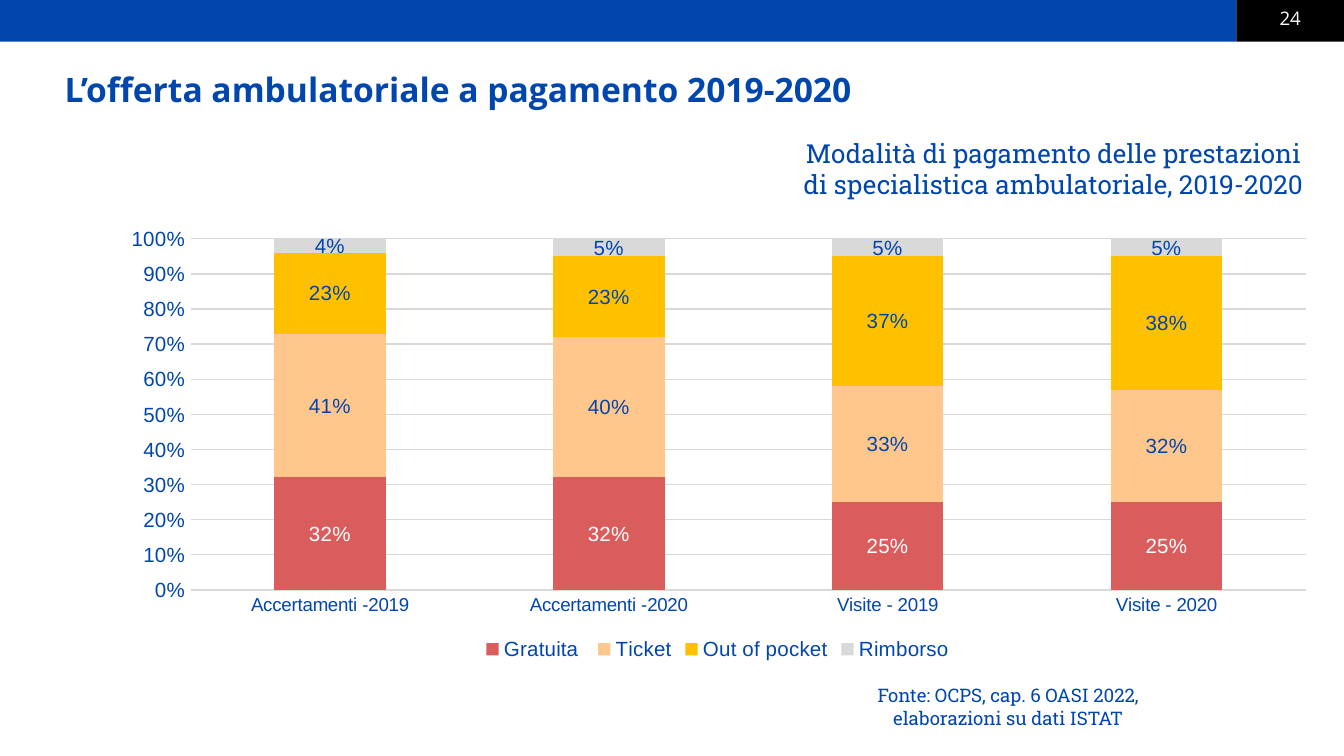
import pptx
import pptx.chart.data
import pptx.dml.color
import pptx.enum.chart
import pptx.enum.shapes
import pptx.enum.text
import pptx.oxml
import pptx.oxml.ns
import pptx.util

Inches = pptx.util.Inches
Pt = pptx.util.Pt
RGBColor = pptx.dml.color.RGBColor
PP_ALIGN = pptx.enum.text.PP_ALIGN
ANCHOR = pptx.enum.text.MSO_ANCHOR
XL = pptx.enum.chart

BLUE = RGBColor(0x00, 0x46, 0xAD)
BLACK = RGBColor(0x00, 0x00, 0x00)
WHITE = RGBColor(0xFF, 0xFF, 0xFF)
RED = RGBColor(0xDA, 0x5D, 0x5D)
PEACH = RGBColor(0xFF, 0xC7, 0x8C)
AMBER = RGBColor(0xFF, 0xC0, 0x00)
GREY = RGBColor(0xD9, 0xD9, 0xD9)

CATEGORIES = ["Accertamenti -2019", "Accertamenti -2020", "Visite - 2019", "Visite - 2020"]
# name, values, fill, label colour
SERIES = [
    ("Gratuita ", (0.32, 0.32, 0.25, 0.25), RED, WHITE),
    ("Ticket", (0.41, 0.40, 0.33, 0.32), PEACH, BLUE),
    ("Out of pocket", (0.23, 0.23, 0.37, 0.38), AMBER, BLUE),
    ("Rimborso", (0.04, 0.05, 0.05, 0.05), GREY, BLUE),
]


class SlideBuilder:
    heading_font = "Open Sans"
    body_font = "Roboto Slab"
    chart_font = "Arial"

    def __init__(self, prs):
        self.s = prs.slides.add_slide(prs.slide_layouts[5])

    def style(self, font, name, size, color=BLUE, bold=False):
        font.name, font.size, font.bold = name, Pt(size), bold
        font.color.rgb = color

    def fill_text(self, sp, text, name, size, color=BLUE, bold=False,
                  align=PP_ALIGN.CENTER, anchor=ANCHOR.TOP, inset=0):
        tf = sp.text_frame
        tf.text = text
        tf.word_wrap = True
        tf.auto_size = pptx.enum.text.MSO_AUTO_SIZE.NONE
        tf.vertical_anchor = anchor
        tf.margin_left = tf.margin_right = tf.margin_top = tf.margin_bottom = Inches(inset)
        p = tf.paragraphs[0]
        p.alignment = align
        self.style(p.runs[0].font, name, size, color, bold)

    def title(self, text, x, y, w, h):
        sp = self.s.shapes.title
        sp.left, sp.top, sp.width, sp.height = map(Inches, (x, y, w, h))
        self.fill_text(sp, text, self.heading_font, 18, bold=True,
                       align=PP_ALIGN.LEFT, anchor=ANCHOR.BOTTOM)
        sp.text_frame.paragraphs[0].line_spacing = Pt(35)

    def bar(self, x, y, w, h, color):
        sp = self.s.shapes.add_shape(pptx.enum.shapes.MSO_SHAPE.RECTANGLE,
                                     *map(Inches, (x, y, w, h)))
        sp.shadow.inherit = False
        sp.fill.solid()
        sp.fill.fore_color.rgb = color
        sp.line.fill.background()

    def text(self, text, x, y, w, h, name, size, color=BLUE, inset=0):
        sp = self.s.shapes.add_textbox(*map(Inches, (x, y, w, h)))
        self.fill_text(sp, text, name, size, color, inset=inset)

    def stacked_chart(self, x, y, w, h):
        data = pptx.chart.data.CategoryChartData(number_format="0%")
        data.categories = CATEGORIES
        for name, values, _, _ in SERIES:
            data.add_series(name, values)
        chart = self.s.shapes.add_chart(XL.XL_CHART_TYPE.COLUMN_STACKED_100,
                                        *map(Inches, (x, y, w, h)), data).chart
        self.style(chart.font, self.chart_font, 11)
        chart.has_title = False
        chart.has_legend = True
        chart.legend.position = XL.XL_LEGEND_POSITION.BOTTOM
        chart.legend.include_in_layout = False
        self.style(chart.legend.font, self.chart_font, 11)

        plot = chart.plots[0]
        plot.gap_width, plot.overlap, plot.vary_by_categories = 150, 100, False
        for series, (_, _, color, label_color) in zip(plot.series, SERIES):
            series.format.fill.solid()
            series.format.fill.fore_color.rgb = color
            labels = series.data_labels
            labels.show_value = True
            labels.position = XL.XL_LABEL_POSITION.CENTER
            labels.number_format, labels.number_format_is_linked = "0%", False
            self.style(labels.font, self.chart_font, 11, label_color)

        for axis, size in ((chart.category_axis, 10), (chart.value_axis, 11)):
            axis.major_tick_mark = axis.minor_tick_mark = XL.XL_TICK_MARK.NONE
            self.style(axis.tick_labels.font, self.chart_font, size)
        values = chart.value_axis
        values.minimum_scale, values.maximum_scale, values.major_unit = 0, 1, 0.1
        values.tick_labels.number_format = "0%"
        values.tick_labels.number_format_is_linked = False
        values.format.line.fill.background()
        values.has_major_gridlines = True
        for line in (chart.category_axis.format.line, values.major_gridlines.format.line):
            line.color.rgb, line.width = GREY, Pt(0.75)
        self.place_plot(chart, x=0.07, y=0.05, w=0.91, h=0.78)

    def place_plot(self, chart, **fractions):
        """Fix the inner plot area as fractions of the chart frame."""
        qn = pptx.oxml.ns.qn
        area = chart.plots[0]._element.getparent()
        for old in area.findall(qn("c:layout")):
            area.remove(old)
        modes = '<c:xMode val="edge"/><c:yMode val="edge"/>'
        sizes = "".join(f'<c:{key} val="{val}"/>' for key, val in fractions.items())
        area.insert(0, pptx.oxml.parse_xml(
            f'<c:layout {pptx.oxml.ns.nsdecls("c")}><c:manualLayout>'
            f'<c:layoutTarget val="inner"/>{modes}{sizes}</c:manualLayout></c:layout>'))


def main():
    prs = pptx.Presentation()
    prs.slide_width = Inches(10)
    prs.slide_height = prs.slide_width * 9 // 16
    b = SlideBuilder(prs)
    b.bar(0, 0, 9.2, 0.31, BLUE)
    b.bar(9.2, 0, 0.8, 0.31, BLACK)
    b.text("24", 9.2, 0, 0.8, 0.31, b.heading_font, 10, WHITE, inset=0.05)
    b.title("L’offerta ambulatoriale a pagamento 2019-2020", 0.48, 0.38, 9.12, 0.43)
    b.text("Fonte: OCPS, cap. 6 OASI 2022, elaborazioni su dati ISTAT",
           6.29, 5.09, 2.42, 0.34, b.body_font, 10)
    b.text("Modalità di pagamento delle prestazioni di specialistica ambulatoriale, 2019-2020",
           5.93, 1.02, 3.82, 0.47, b.body_font, 14)
    b.stacked_chart(0.78, 1.61, 9.12, 3.35)
    prs.save("out.pptx")


if __name__ == "__main__":
    main()
